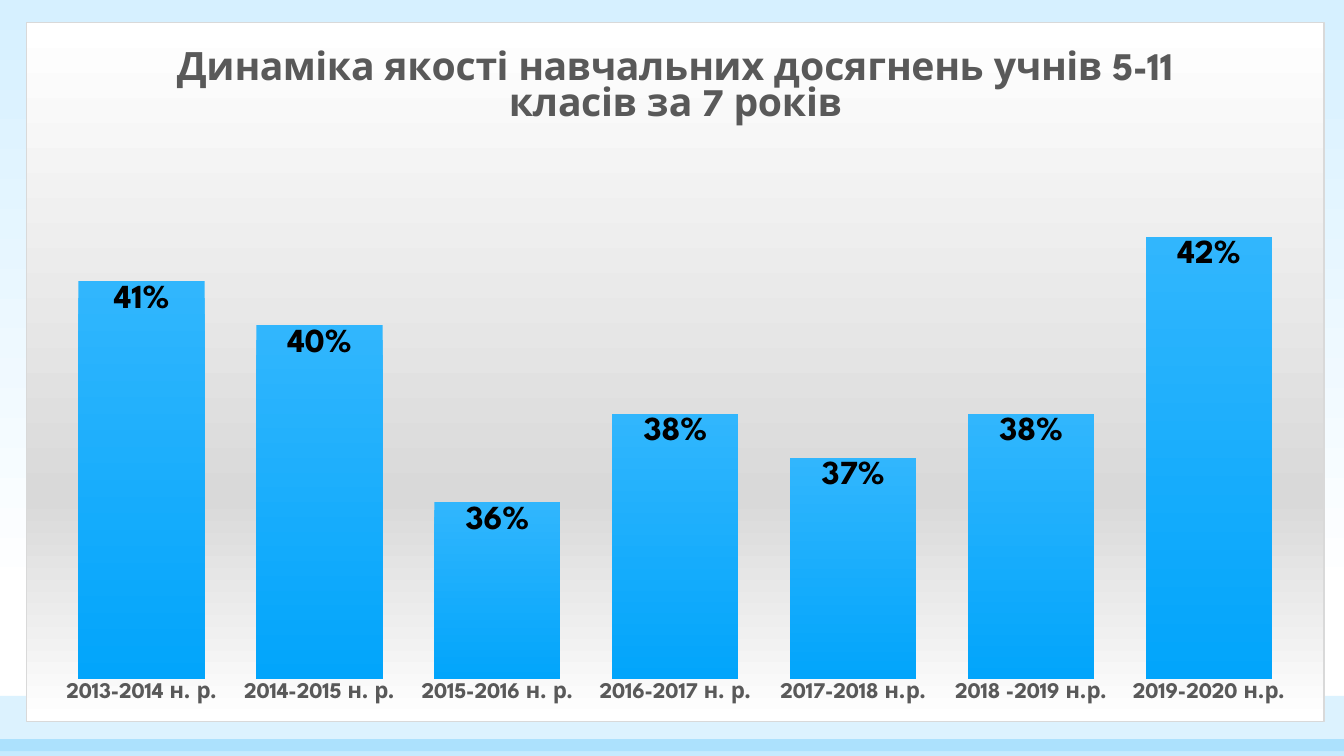
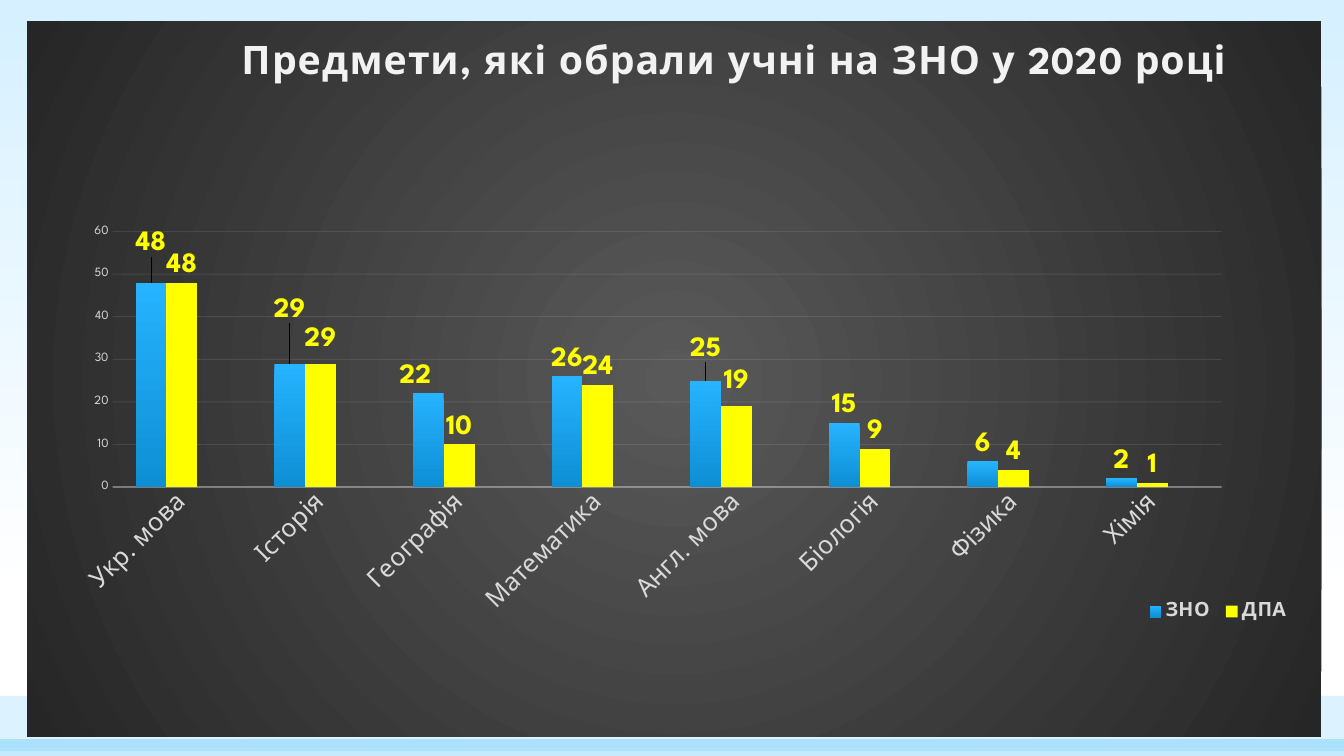
from pptx import Presentation
from pptx.chart.data import CategoryChartData
from pptx.dml.color import RGBColor
from pptx.enum.chart import XL_CHART_TYPE, XL_LABEL_POSITION, XL_LEGEND_POSITION, XL_TICK_MARK
from pptx.enum.shapes import MSO_SHAPE
from pptx.oxml import parse_xml
from pptx.oxml.ns import nsdecls, qn
from pptx.util import Pt

FONT = "League Spartan"
WIDTH, HEIGHT = 960, 540

BLACK = RGBColor(0x00, 0x00, 0x00)
WHITE = RGBColor(0xFF, 0xFF, 0xFF)
YELLOW = RGBColor(0xFF, 0xFF, 0x00)
CHARCOAL = RGBColor(0x26, 0x26, 0x26)
DARK_GRAY = RGBColor(0x59, 0x59, 0x59)
LIGHT_GRAY = RGBColor(0xD9, 0xD9, 0xD9)
PALE_GRAY = RGBColor(0xF2, 0xF2, 0xF2)
PALE_BLUE = RGBColor(0xD6, 0xF0, 0xFF)
SKY_BLUE = RGBColor(0x31, 0xB6, 0xFD)
BRIGHT_BLUE = RGBColor(0x02, 0xA5, 0xFB)
DEEP_BLUE = RGBColor(0x0E, 0x8F, 0xD4)
VIVID_BLUE = RGBColor(0x26, 0xB3, 0xFF)

LINEAR_DOWN = '<a:lin ang="5400000" scaled="0"/>'
RADIAL = ('<a:path path="circle"><a:fillToRect l="50000" t="50000" '
          'r="50000" b="50000"/></a:path>')


def set_font(font, color, **values):
    for name, value in {"name": FONT, "bold": False, **values}.items():
        setattr(font, name, value)
    font.color.rgb = color


def set_gradient(fill, top, bottom, end=1.0):
    """Fill from top to bottom, reaching the second colour at end."""
    fill.gradient()
    fill.gradient_angle = 270
    for stop, color, position in zip(fill.gradient_stops, (top, bottom), (0, end)):
        stop.color.rgb = color
        stop.position = position


def set_alpha(element, path, percent):
    for color in element.xpath(path + "//a:srgbClr"):
        color.append(parse_xml(f'<a:alpha {nsdecls("a")} val="{percent * 1000}"/>'))


def set_layout(parent, after=None, inner=False, edge=True, **box):
    """Place a chart part by fractions of the chart's size."""
    for old in parent.findall(qn("c:layout")):
        parent.remove(old)
    parts = ['<c:layoutTarget val="inner"/>'] if inner else []
    if edge:
        parts += ['<c:xMode val="edge"/>', '<c:yMode val="edge"/>']
    parts += [f'<c:{name} val="{value}"/>' for name, value in box.items()]
    layout = parse_xml(f'<c:layout {nsdecls("c")}><c:manualLayout>'
                       f'{"".join(parts)}</c:manualLayout></c:layout>')
    if after:
        parent.findall(qn(after))[-1].addnext(layout)
    else:
        parent.insert(0, layout)


class ReportDeck:
    """Shared style and the slide being built."""

    def __init__(self):
        self.presentation = Presentation()
        self.presentation.slide_width = Pt(WIDTH)
        self.presentation.slide_height = Pt(HEIGHT)
        self.slide = None

    def new_slide(self):
        self.slide = self.presentation.slides.add_slide(self.presentation.slide_layouts[6])
        set_gradient(self.slide.background.fill, PALE_BLUE, WHITE, 0.79)
        self.band(top=497, height=39.5, percent=17)
        self.band(top=528, height=12, percent=28)

    def band(self, top, height, percent):
        shape = self.slide.shapes.add_shape(
            MSO_SHAPE.RECTANGLE, 0, Pt(top), Pt(WIDTH), Pt(height))
        shape.shadow.inherit = False
        shape.line.fill.background()
        shape.fill.solid()
        shape.fill.fore_color.rgb = SKY_BLUE
        set_alpha(shape.element, ".//p:spPr", percent)

    def column_chart(self, box, categories, series, title, title_color,
                     gap, plot, number_format="General"):
        data = CategoryChartData(number_format=number_format)
        data.categories = categories
        for name, values in series.items():
            data.add_series(name, values)
        chart = self.slide.shapes.add_chart(
            XL_CHART_TYPE.COLUMN_CLUSTERED, *map(Pt, box), data).chart
        set_font(chart.font, BLACK, size=Pt(10))
        chart.has_legend = False
        chart.has_title = True
        chart.chart_title.include_in_layout = False
        chart.chart_title.text_frame.text = title
        run = chart.chart_title.text_frame.paragraphs[0].runs[0]
        set_font(run.font, title_color, size=Pt(28), bold=True)
        chart.plots[0].gap_width = gap
        chart.plots[0].overlap = 0
        chart.plots[0].vary_by_categories = False
        set_layout(chart.element.xpath(".//c:plotArea")[0], inner=True, **plot)
        return chart

    def chart_area(self, chart, stops, direction, border=None):
        marks = "".join(f'<a:gs pos="{position * 1000}"><a:srgbClr val="{color}"/></a:gs>'
                        for position, color in stops)
        line = (f'<a:solidFill><a:srgbClr val="{border}"/></a:solidFill>'
                if border else "<a:noFill/>")
        chart.element.xpath("c:chart")[0].addnext(parse_xml(
            f'<c:spPr {nsdecls("c", "a")}><a:gradFill><a:gsLst>{marks}</a:gsLst>'
            f'{direction}</a:gradFill><a:ln w="9525">{line}</a:ln></c:spPr>'))

    def axis(self, axis, color, **values):
        axis.major_tick_mark = axis.minor_tick_mark = XL_TICK_MARK.NONE
        axis.has_major_gridlines = False
        axis.format.line.fill.background()
        set_font(axis.tick_labels.font, color, **values)

    def scale(self, axis, minimum, maximum, step):
        axis.minimum_scale = minimum
        axis.maximum_scale = maximum
        axis.major_unit = step

    def labels(self, series, color, size, position, number_format="General"):
        labels = series.data_labels
        labels.show_value = True
        labels.position = position
        labels.number_format = number_format
        labels.number_format_is_linked = False
        set_font(labels.font, color, size=Pt(size), bold=True)

    def shift_label(self, chart, series_index, point_index, x, y):
        label = chart.series[series_index].points[point_index].data_label
        label.position = XL_LABEL_POSITION.OUTSIDE_END
        set_font(label.font, YELLOW, size=Pt(20), bold=True)
        element = chart.element.xpath(
            f".//c:ser[c:idx/@val='{series_index}']"
            f"/c:dLbls/c:dLbl[c:idx/@val='{point_index}']")[0]
        set_layout(element, after="c:idx", edge=False, x=x, y=y)

    def legend(self, chart, hidden_entry, **box):
        chart.has_legend = True
        chart.legend.position = XL_LEGEND_POSITION.RIGHT
        chart.legend.include_in_layout = False
        set_font(chart.legend.font, LIGHT_GRAY, size=Pt(14), bold=True)
        legend = chart.element.xpath(".//c:legend")[0]
        legend.find(qn("c:legendPos")).addnext(parse_xml(
            f'<c:legendEntry {nsdecls("c")}><c:idx val="{hidden_entry}"/>'
            '<c:delete val="1"/></c:legendEntry>'))
        set_layout(legend, after="c:legendEntry", **box)


def quality_slide(deck):
    deck.new_slide()
    chart = deck.column_chart(
        box=(18.7, 15.8, 927.4, 499.7),
        categories=["2013-2014 н. р.", "2014-2015 н. р.", "2015-2016 н. р.",
                    "2016-2017 н. р.", "2017-2018 н.р.", "2018 -2019 н.р.",
                    "2019-2020 н.р."],
        series={"Series 1": [0.41, 0.4, 0.36, 0.38, 0.37, 0.38, 0.42]},
        title="Динаміка якості навчальних досягнень учнів 5-11 класів за 7 років",
        title_color=DARK_GRAY, gap=41, number_format="0%",
        plot={"x": 0.02, "y": 0.18, "w": 0.96, "h": 0.76})
    deck.chart_area(chart, [(0, WHITE), (68, LIGHT_GRAY), (100, WHITE)],
                    LINEAR_DOWN, border=LIGHT_GRAY)
    deck.axis(chart.category_axis, DARK_GRAY, size=Pt(16), bold=True)
    deck.axis(chart.value_axis, DARK_GRAY, size=Pt(10))
    deck.scale(chart.value_axis, 0.32, 0.44, 0.02)
    chart.value_axis.visible = False
    series = chart.series[0]
    set_gradient(series.format.fill, SKY_BLUE, BRIGHT_BLUE)
    deck.labels(series, BLACK, 24, XL_LABEL_POSITION.INSIDE_END, "0%")


def subjects_slide(deck):
    deck.new_slide()
    categories = ["Укр. мова", "Історія", "Географія", "Математика",
                  "Англ. мова", "Біологія", "Фізика", "Хімія"]
    # The empty third series keeps room to the right of each pair
    chart = deck.column_chart(
        box=(19.4, 15.1, 924.5, 511.2), categories=categories,
        series={"ЗНО": [48, 29, 22, 26, 25, 15, 6, 2],
                "ДПА": [48, 29, 10, 24, 19, 9, 4, 1],
                "Series 3": [None] * len(categories)},
        title="Предмети, які обрали учні на ЗНО у 2020 році",
        title_color=PALE_GRAY, gap=150,
        plot={"x": 0.066, "y": 0.294, "w": 0.857, "h": 0.357})
    deck.chart_area(chart, [(0, DARK_GRAY), (100, CHARCOAL)], RADIAL)
    set_layout(chart.element.xpath(".//c:title")[0], after="c:tx", x=0.16, y=0.02)
    chart.element.xpath(".//c:title//a:r/a:rPr")[0].set("spc", "100")

    # Axes and gridlines
    deck.axis(chart.category_axis, LIGHT_GRAY, size=Pt(18))
    chart.element.xpath(".//c:catAx/c:txPr/a:bodyPr")[0].set("rot", "-2700000")
    deck.axis(chart.value_axis, LIGHT_GRAY, size=Pt(9))
    deck.scale(chart.value_axis, 0, 60, 10)
    chart.value_axis.has_major_gridlines = True
    for lines, width, path, percent in (
            (chart.category_axis, 1, ".//c:catAx/c:spPr", 54),
            (chart.value_axis.major_gridlines, 0.75, ".//c:majorGridlines", 10)):
        lines.format.line.color.rgb = PALE_GRAY
        lines.format.line.width = Pt(width)
        set_alpha(chart.element, path, percent)

    # Columns and their labels
    exam, attestation, _ = chart.series
    set_gradient(exam.format.fill, VIVID_BLUE, DEEP_BLUE)
    attestation.format.fill.solid()
    attestation.format.fill.fore_color.rgb = YELLOW
    for series in (exam, attestation):
        deck.labels(series, YELLOW, 20, XL_LABEL_POSITION.OUTSIDE_END)
    for series_index, point_index, x, y in (
            (0, 0, 0, -0.03), (0, 1, 0, -0.05), (0, 2, -0.01, 0),
            (0, 4, 0, -0.02), (1, 1, 0, -0.01), (1, 4, 0, -0.01)):
        deck.shift_label(chart, series_index, point_index, x, y)
    deck.legend(chart, hidden_entry=2, x=0.86, y=0.8, w=0.12, h=0.05)


def main():
    deck = ReportDeck()
    quality_slide(deck)
    subjects_slide(deck)
    deck.presentation.save("out.pptx")


if __name__ == "__main__":
    main()
